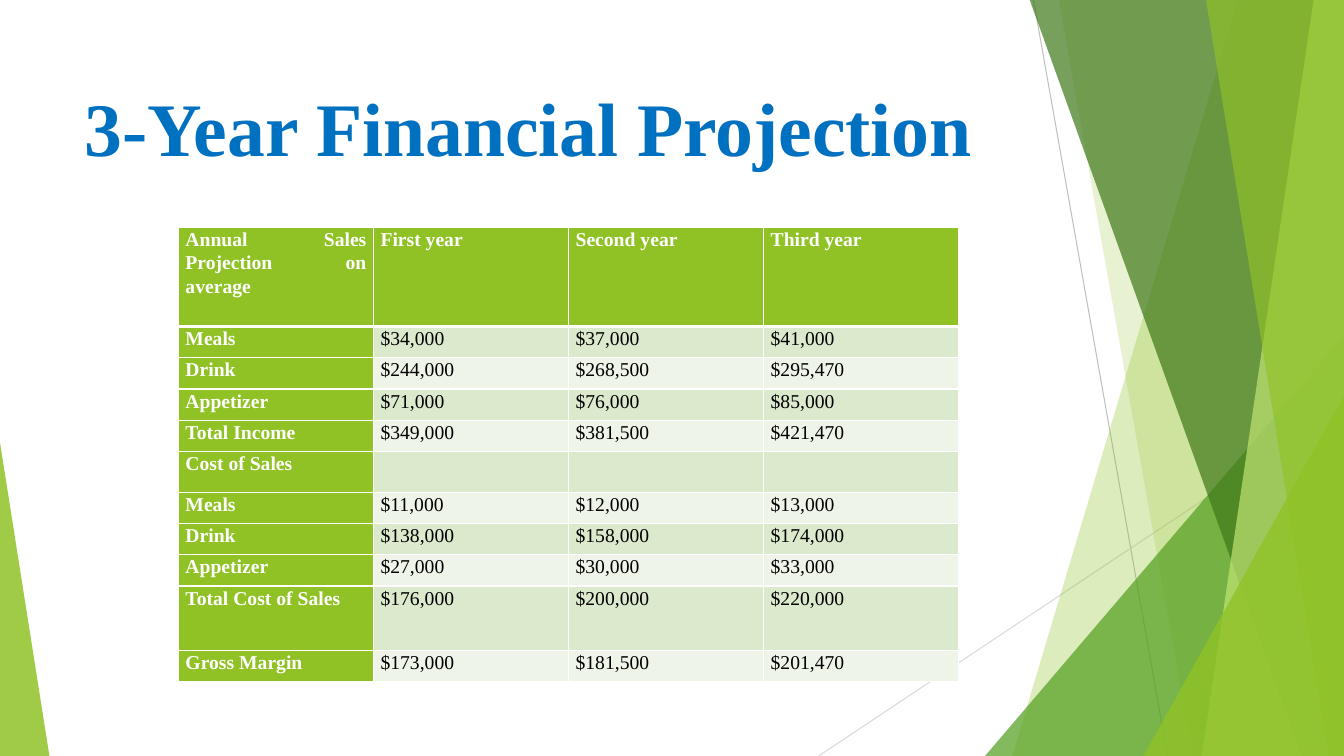
from lxml.etree import SubElement
from pptx import Presentation
from pptx.dml.color import RGBColor
from pptx.enum.shapes import MSO_CONNECTOR, MSO_SHAPE
from pptx.enum.text import MSO_ANCHOR, PP_ALIGN
from pptx.oxml.ns import qn
from pptx.util import Inches, Pt

WIDTH, HEIGHT = 13.33, 7.5
GREEN, WHITE = "90C226", "FFFFFF"


def color(value):
    return RGBColor.from_string(value)


def write(frame, text, size=14, hue="000000", bold=False, align=PP_ALIGN.LEFT,
          anchor=MSO_ANCHOR.TOP, spacing=None, insets=(0.07, 0, 0.07, 0)):
    frame.word_wrap = True
    frame.vertical_anchor = anchor
    frame.margin_left, frame.margin_top, frame.margin_right, frame.margin_bottom = map(Inches, insets)
    paragraph = frame.paragraphs[0]
    paragraph.alignment = align
    paragraph.line_spacing = spacing
    run = paragraph.add_run()
    run.text = text
    run.font.name = "Times New Roman"
    run.font.size = Pt(size)
    run.font.bold = bold
    run.font.color.rgb = color(hue)


presentation = Presentation()
presentation.slide_width = Inches(WIDTH)
presentation.slide_height = Inches(HEIGHT)
slide = presentation.slides.add_slide(presentation.slide_layouts[5])
shapes = slide.shapes

for x1, y1, x2, y2, hue in [(10.25, 0, 11.58, HEIGHT, "BFBFBF"), (WIDTH, 4.03, 8.12, HEIGHT, "D9D9D9")]:
    line = shapes.add_connector(MSO_CONNECTOR.STRAIGHT, *map(Inches, (x1, y1, x2, y2)))
    line.line.color.rgb = color(hue)
    line.line.width = Pt(0.75)
    SubElement(line._element.spPr, qn("a:effectLst"))

facets = [
    ("band", 12.28, 10.04, GREEN, 30),
    ("band", 10.5, 11.83, GREEN, 20),
    ("right triangle", 3.56, 4.17, "54A021", 72),
    ("band", 10.21, 12.91, "3F7819", 70),
    ("band", 13.03, 11.92, "C0E474", 70),
    ("band", 11.96, 13.18, GREEN, 65),
    ("right triangle", 1.99, 3.57, GREEN, 80),
    ("left triangle", 0.49, 3.11, GREEN, 85),
]
for kind, first, second, hue, opacity in facets:
    if kind == "band":
        builder = shapes.build_freeform(Inches(first), Inches(-0.01), scale=1.0)
        corners = [(WIDTH, -0.01), (WIDTH, HEIGHT), (second, HEIGHT)]
        builder.add_line_segments([(Inches(x), Inches(y)) for x, y in corners], close=True)
        facet = builder.convert_to_shape()
    else:
        on_right = kind == "right triangle"
        left = WIDTH - first if on_right else 0
        facet = shapes.add_shape(MSO_SHAPE.ISOSCELES_TRIANGLE,
                                 *map(Inches, (left, HEIGHT - second, first, second)))
        facet.adjustments[0] = 1 if on_right else 0
    facet.shadow.inherit = False
    facet.line.fill.background()
    facet.fill.solid()
    facet.fill.fore_color.rgb = color(hue)
    fill_color = facet._element.spPr.find(".//" + qn("a:srgbClr"))
    SubElement(fill_color, qn("a:alpha"), val=str(opacity * 1000))

title = shapes.title
title.left, title.top, title.width, title.height = map(Inches, (0.74, 0.67, 9.4, 1.44))
write(title.text_frame, "3-Year Financial Projection", size=54, hue="0070C0", bold=True,
      insets=(0.1, 0.13, 0.1, 0.05))
shapes._spTree.append(title._element)

rows = [
    ("Annual Sales Projection on average", "First year", "Second year", "Third year"),
    ("Meals", "$34,000", "$37,000", "$41,000"),
    ("Drink", "$244,000", "$268,500", "$295,470"),
    ("Appetizer", "$71,000", "$76,000", "$85,000"),
    ("Total Income", "$349,000", "$381,500", "$421,470"),
    ("Cost of Sales", "", "", ""),
    ("Meals", "$11,000", "$12,000", "$13,000"),
    ("Drink", "$138,000", "$158,000", "$174,000"),
    ("Appetizer", "$27,000", "$30,000", "$33,000"),
    ("Total Cost of Sales", "$176,000", "$200,000", "$220,000"),
    ("Gross Margin", "$173,000", "$181,500", "$201,470"),
]
tall_rows = {0: 0.98, 9: 0.64}
table = shapes.add_table(len(rows), 4, *map(Inches, (1.77, 2.26, 7.74, 4.41))).table
for column in table.columns:
    column.width = Inches(7.74 / 4)
for row_index, values in enumerate(rows):
    table.rows[row_index].height = Inches(tall_rows.get(row_index, 0.31))
    for column_index, value in enumerate(values):
        cell = table.cell(row_index, column_index)
        heading = row_index == 0 or column_index == 0
        properties = cell._tc.get_or_add_tcPr()
        for side in ("lnL", "lnR", "lnT", "lnB"):
            thick = (row_index, side) in [(0, "lnB"), (1, "lnT")]
            border = SubElement(properties, qn("a:" + side), w=str(Pt(3 if thick else 1)))
            SubElement(SubElement(border, qn("a:solidFill")), qn("a:srgbClr"), val=WHITE)
        cell.fill.solid()
        band = "DBE9CD" if row_index % 2 else "EEF4E8"
        cell.fill.fore_color.rgb = color(GREEN if heading else band)
        if value:
            cell.margin_left = cell.margin_right = Inches(0.07)
            cell.margin_top = cell.margin_bottom = 0
            write(cell.text_frame, value, hue=WHITE if heading else "000000", bold=heading,
                  align=PP_ALIGN.JUSTIFY, spacing=1.07)
            cell._tc.txBody.bodyPr.attrib.clear()

presentation.save("out.pptx")
